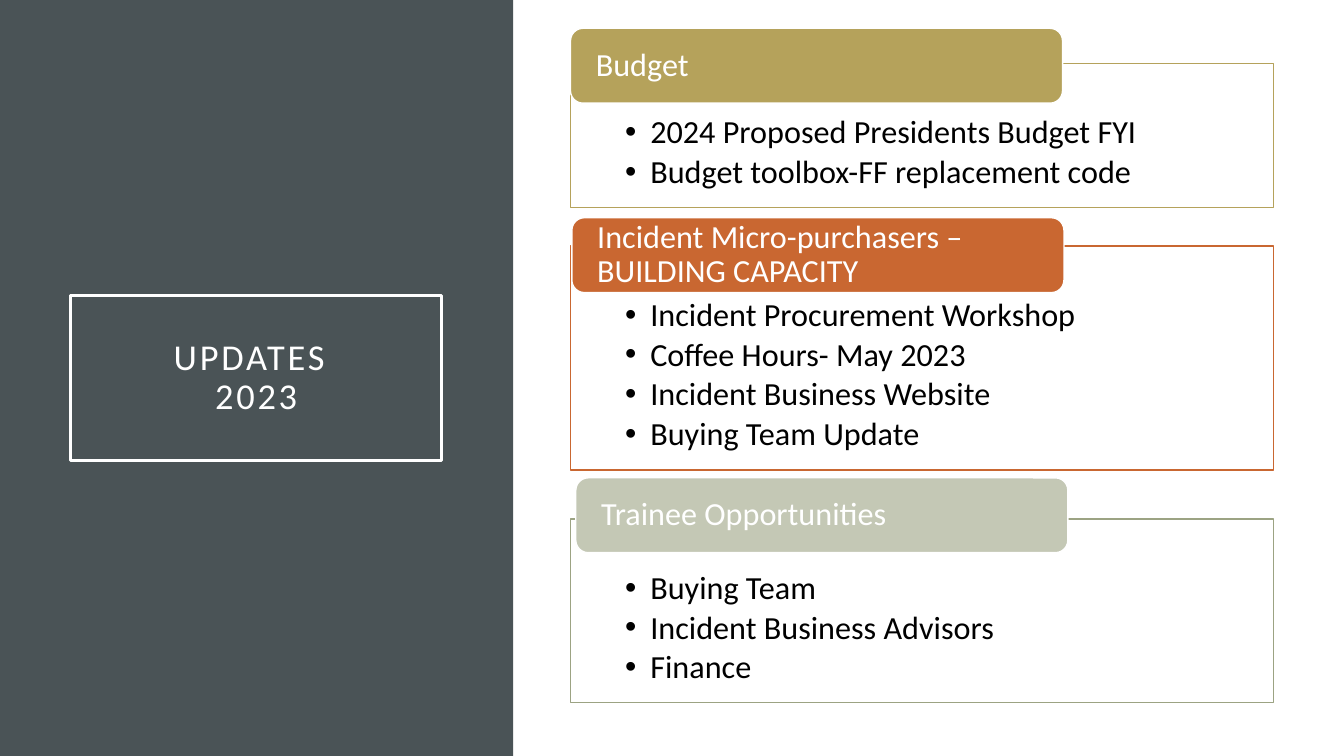
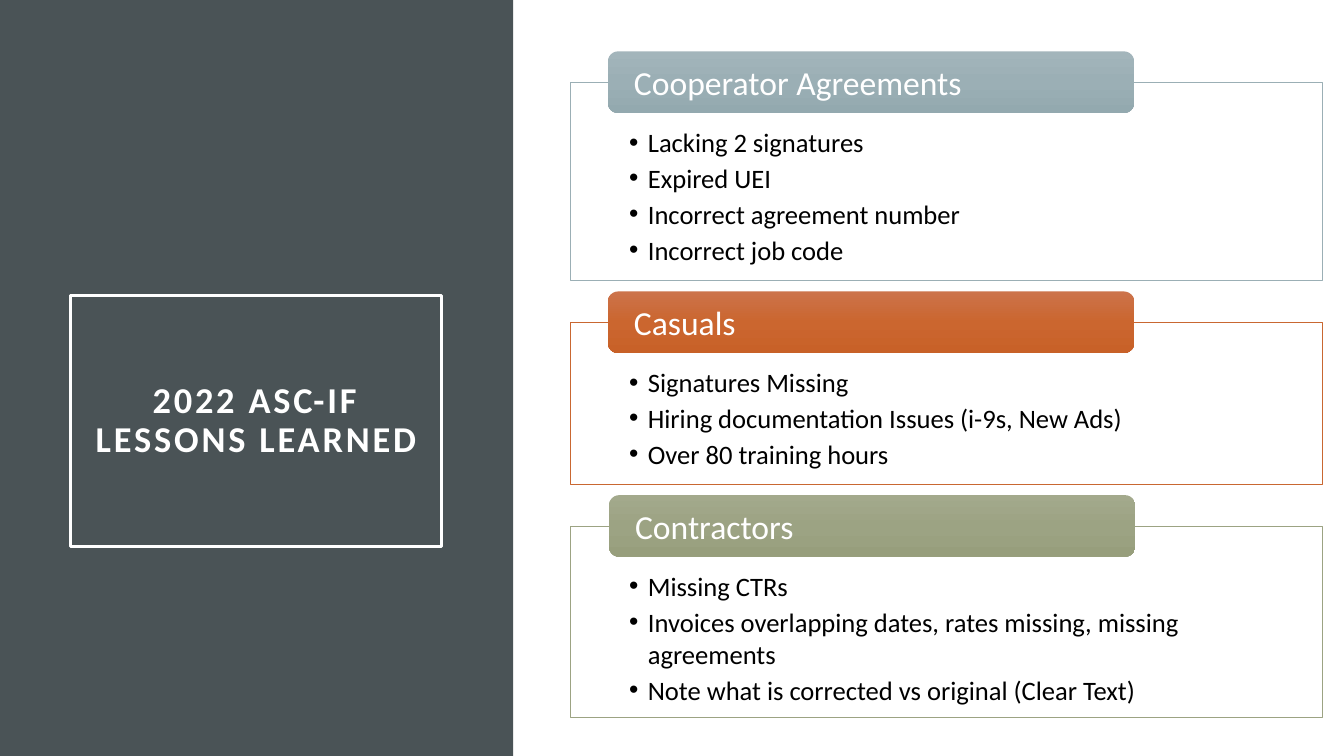
from copy import deepcopy
from dataclasses import dataclass

from lxml import etree
from pptx import Presentation
from pptx.dml.color import RGBColor
from pptx.enum import shapes, text
from pptx.oxml.ns import qn
from pptx.util import Pt

FONT = "Calibri"
WHITE, BLACK, SLATE = "FFFFFF", "000000", "4A5356"
GOLD, ORANGE, SAGE, PALE_SAGE, BLUE_GREY = "B5A25B", "C96731", "9CA383", "C4C8B5", "9BAFB5"
SLIDE_WIDTH, SLIDE_HEIGHT = 960, 540
PANEL_WIDTH = 366.5
BODY_LEFT = 407.5


@dataclass(frozen=True)
class Box:
    left: float
    top: float
    width: float
    height: float


@dataclass(frozen=True)
class Style:
    """Sizes that all sections of one slide share; insets run left, top, right, bottom."""
    body_width: float
    body_insets: tuple[float, float, float, float]
    body_size: float
    body_line: float
    bullet_indent: float
    heading_width: float
    heading_height: float
    heading_inset: float
    heading_size: float
    heading_line: float
    line_spacing: float


@dataclass(frozen=True)
class Section:
    """One colour in heading_fill is solid, several make a vertical gradient."""
    heading: str
    bullets: tuple[str, ...]
    heading_left: float
    heading_top: float
    body_top: float
    body_height: float
    line_color: str
    heading_fill: tuple[str, ...]


@dataclass(frozen=True)
class Page:
    title: str
    title_height: float
    title_bold: bool
    style: Style
    sections: tuple[Section, ...]


UPDATES_STYLE = Style(502, (39, 37.5, 39, 13), 23, 1, 18, 351.5, 53.5, 15.5, 23, 1, 0.9)
LESSONS_STYLE = Style(537, (41.8, 31, 41.8, 11), 19, 0.5, 13.5, 376, 44, 16.5, 24, 0, 1)

PAGES = (
    Page("UPDATES \v2023", 118, False, UPDATES_STYLE, (
        Section("Budget",
                ("2024 Proposed Presidents Budget FYI", "Budget toolbox-FF replacement code"),
                407.5, 20.2, 45.4, 103, GOLD, (GOLD,)),
        Section("Incident Micro-purchasers – BUILDING CAPACITY",
                ("Incident Procurement Workshop", "Coffee Hours- May 2023",
                 "Incident Business Website", "Buying Team Update"),
                408.5, 155.5, 175.8, 160, ORANGE, (ORANGE,)),
        Section("Trainee Opportunities",
                ("Buying Team", "Incident Business Advisors", "Finance"),
                411.3, 341.3, 370.8, 131, SAGE, (PALE_SAGE,)),
    )),
    Page("2022 ASC-IF LESSONS LEARNED", 179.5, True, LESSONS_STYLE, (
        Section("Cooperator Agreements",
                ("Lacking 2 signatures", "Expired UEI",
                 "Incorrect agreement number", "Incorrect job code"),
                434.2, 36.7, 59, 141, BLUE_GREY, ("A3B5BB", BLUE_GREY, "93A9AF")),
        Section("Casuals",
                ("Signatures Missing", "Hiring documentation Issues (i-9s, New Ads)",
                 "Over 80 training hours"),
                434.2, 208.2, 230.4, 115.5, ORANGE, ("CC734B", "CB662F", "C86128")),
        Section("Contractors",
                ("Missing CTRs",
                 "Invoices overlapping dates, rates missing, missing agreements",
                 "Note what is corrected vs original (Clear Text)"),
                435, 353.7, 376, 136.5, SAGE, ("A3A98C", SAGE, "979E7C")),
    )),
)


def rgb(color: str) -> RGBColor:
    return RGBColor.from_string(color)


def fill_shape(shape, colors: tuple[str, ...]) -> None:
    """Fill with nothing, one solid colour, or an evenly spaced top-to-bottom gradient."""
    if not colors:
        shape.fill.background()
        return
    if len(colors) == 1:
        shape.fill.solid()
        shape.fill.fore_color.rgb = rgb(colors[0])
        return
    shape.fill.gradient()
    shape.fill.gradient_angle = 270
    stop_list = shape._element.spPr.find(".//" + qn("a:gsLst"))
    while len(stop_list) < len(colors):
        stop_list.insert(1, deepcopy(stop_list[0]))
    for index, (stop, color) in enumerate(zip(shape.fill.gradient_stops, colors)):
        stop.position = index / (len(colors) - 1)
        stop.color.rgb = rgb(color)


def add_box(slide, kind, box: Box, colors: tuple[str, ...],
            line_color: str = WHITE, line_width: float = 0):
    shape = slide.shapes.add_shape(kind, Pt(box.left), Pt(box.top), Pt(box.width), Pt(box.height))
    shape.shadow.inherit = False
    fill_shape(shape, colors)
    if line_width:
        shape.line.color.rgb = rgb(line_color)
        shape.line.width = Pt(line_width)
    else:
        shape.line.fill.background()
    return shape


def set_text(shape, content: str, size: float, color: str, insets: tuple[float, ...],
             anchor, alignment, line_spacing: float, bold: bool = False) -> None:
    frame = shape.text_frame
    frame.text = content
    frame.word_wrap = True
    frame.vertical_anchor = anchor
    frame.margin_left, frame.margin_top, frame.margin_right, frame.margin_bottom = map(Pt, insets)
    for paragraph in frame.paragraphs:
        paragraph.alignment = alignment
        paragraph.line_spacing = line_spacing
        for run in paragraph.runs:
            run.font.name = FONT
            run.font.size = Pt(size)
            run.font.bold = bold
            run.font.color.rgb = rgb(color)


def add_bullets(shape, indent: float, space_after: float) -> None:
    for paragraph in shape.text_frame.paragraphs:
        paragraph.space_after = Pt(space_after)
        properties = paragraph._p.get_or_add_pPr()
        properties.set("marL", str(Pt(indent)))
        properties.set("indent", str(-Pt(indent)))
        etree.SubElement(properties, qn("a:buFont")).set("typeface", "Arial")
        etree.SubElement(properties, qn("a:buChar")).set("char", "•")


def add_title_panel(slide, page: Page) -> None:
    rectangle = shapes.MSO_SHAPE.RECTANGLE
    add_box(slide, rectangle, Box(0, 0, PANEL_WIDTH, SLIDE_HEIGHT), (SLATE,))
    title = add_box(slide, rectangle, Box(50.5, 211, 265, page.title_height), (), WHITE, 2.5)
    set_text(title, page.title, 26, WHITE, (14.4,) * 4, text.MSO_ANCHOR.MIDDLE,
             text.PP_ALIGN.CENTER, 0.9, page.title_bold)
    for run in title.text_frame.paragraphs[0].runs:
        run.font._element.set("spc", "200")


def add_section(slide, section: Section, style: Style) -> None:
    body = add_box(slide, shapes.MSO_SHAPE.RECTANGLE,
                   Box(BODY_LEFT, section.body_top, style.body_width, section.body_height),
                   (WHITE,), section.line_color, style.body_line)
    set_text(body, "\n".join(section.bullets), style.body_size, BLACK, style.body_insets,
             text.MSO_ANCHOR.TOP, text.PP_ALIGN.LEFT, style.line_spacing)
    add_bullets(body, style.bullet_indent, 0.15 * style.body_size)

    heading = add_box(slide, shapes.MSO_SHAPE.ROUNDED_RECTANGLE,
                      Box(section.heading_left, section.heading_top,
                          style.heading_width, style.heading_height),
                      section.heading_fill, WHITE, style.heading_line)
    set_text(heading, section.heading, style.heading_size, WHITE,
             (style.heading_inset, 0, style.heading_inset, 0),
             text.MSO_ANCHOR.MIDDLE, text.PP_ALIGN.LEFT, style.line_spacing)


def main() -> None:
    presentation = Presentation()
    presentation.slide_width, presentation.slide_height = Pt(SLIDE_WIDTH), Pt(SLIDE_HEIGHT)
    for page in PAGES:
        slide = presentation.slides.add_slide(presentation.slide_layouts[6])
        add_title_panel(slide, page)
        for section in page.sections:
            add_section(slide, section, page.style)
    presentation.save("out.pptx")


if __name__ == "__main__":
    main()
